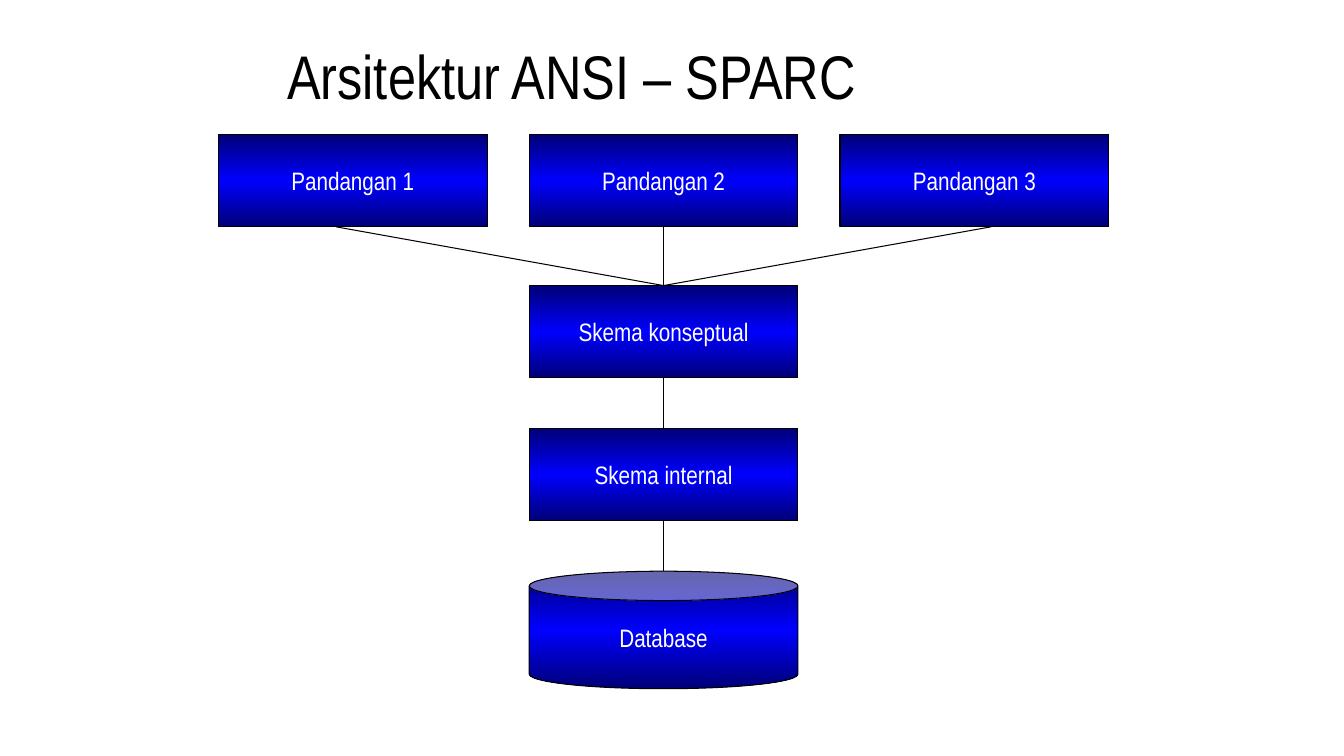
from copy import deepcopy
from dataclasses import dataclass

from pptx import Presentation as Deck
from pptx.dml.color import RGBColor as RGB
from pptx.enum.shapes import MSO_CONNECTOR as Link, MSO_SHAPE as Form
from pptx.enum.text import MSO_ANCHOR as Anchor, PP_ALIGN as Align
from pptx.oxml.ns import qn
from pptx.oxml.xmlchemy import OxmlElement as Node
from pptx.util import Inches, Pt

# Grid: 160 columns by 90 rows, twelve to the inch
UNIT = Inches(1) // 12
COLS, ROWS = 160, 90


@dataclass
class Theme:
    font: str = "Arial Narrow"
    ink: RGB = RGB(0, 0, 0)
    pale: RGB = RGB(255, 255, 255)
    dark: RGB = RGB(0, 0, 0x76)
    blue: RGB = RGB(0, 0, 255)
    head: Pt = Pt(44)
    body: Pt = Pt(18)
    rule: Pt = Pt(0.75)


class Sketch:
    def __init__(self, slide, theme):
        self.slide, self.theme = slide, theme

    def label(self, frame, text, size, color, align):
        frame.vertical_anchor = Anchor.MIDDLE
        para = frame.paragraphs[0]
        para.alignment = align
        run = para.add_run()
        run.text = text
        run.font.name, run.font.size = self.theme.font, size
        run.font.color.rgb = color
        return para

    def title(self, text, *area):
        box = self.slide.shapes.add_textbox(*(n * UNIT for n in area))
        box.text_frame.word_wrap = True
        para = self.label(box.text_frame, text, self.theme.head,
                          self.theme.ink, Align.LEFT)
        para.line_spacing = 0.9

    def block(self, form, text, *area):
        shape = self.slide.shapes.add_shape(form, *(n * UNIT for n in area))
        shape.shadow.inherit = False
        shape.line.color.rgb = self.theme.ink
        shape.line.width = self.theme.rule
        self.shade(shape)
        shape.text_frame.word_wrap = False
        self.label(shape.text_frame, text, self.theme.body,
                   self.theme.pale, Align.CENTER)

    def shade(self, shape):
        fill = shape.fill
        fill.gradient()
        fill.gradient_angle = 270
        # A third stop makes the band dark, bright, dark
        stops = shape._element.spPr.find(".//" + qn("a:gsLst"))
        stops.append(deepcopy(stops[-1]))
        tones = (self.theme.dark, self.theme.blue, self.theme.dark)
        for i, (stop, tone) in enumerate(zip(fill.gradient_stops, tones)):
            stop.position = i / 2
            stop.color.rgb = tone

    def line(self, *ends):
        line = self.slide.shapes.add_connector(
            Link.STRAIGHT, *(n * UNIT for n in ends))
        line.line.color.rgb = self.theme.ink
        line.line.width = self.theme.rule
        line._element.spPr.append(Node("a:effectLst"))


def main():
    deck = Deck()
    deck.slide_width, deck.slide_height = COLS * UNIT, ROWS * UNIT
    sketch = Sketch(deck.slides.add_slide(deck.slide_layouts[6]), Theme())

    wide, high, left, step = 32, 11, 26, 37
    mid = left + step
    axis = mid + wide // 2
    top, core, inner, base = 16, 34, 51, 68

    sketch.title("Arsitektur ANSI – SPARC", 33, 3, 100, 13)

    # Views
    for i in range(3):
        sketch.block(Form.FLOWCHART_PROCESS, f"Pandangan {i + 1}",
                     left + i * step, top, wide, high)

    # Schemas and store
    for text, row in (("Skema konseptual", core), ("Skema internal", inner)):
        sketch.block(Form.FLOWCHART_PROCESS, text, mid, row, wide, high)
    sketch.block(Form.CAN, "Database", mid, base, wide, 14)

    # Links from the views, then down the axis
    for side in (-39, 0, 39):
        sketch.line(axis, core, axis + side, top + high)
    for start, end in ((core, inner), (inner, base)):
        sketch.line(axis, start + high, axis, end)

    deck.save("out.pptx")


if __name__ == "__main__":
    main()
